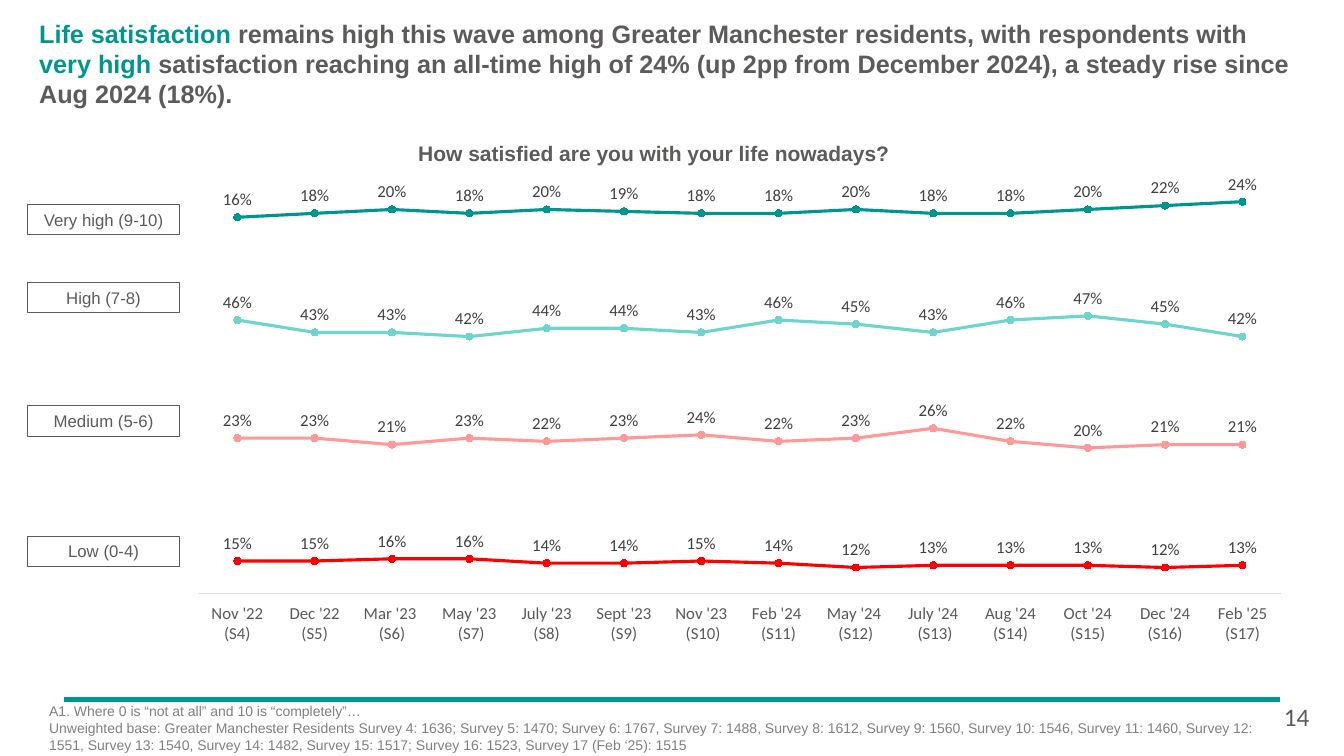
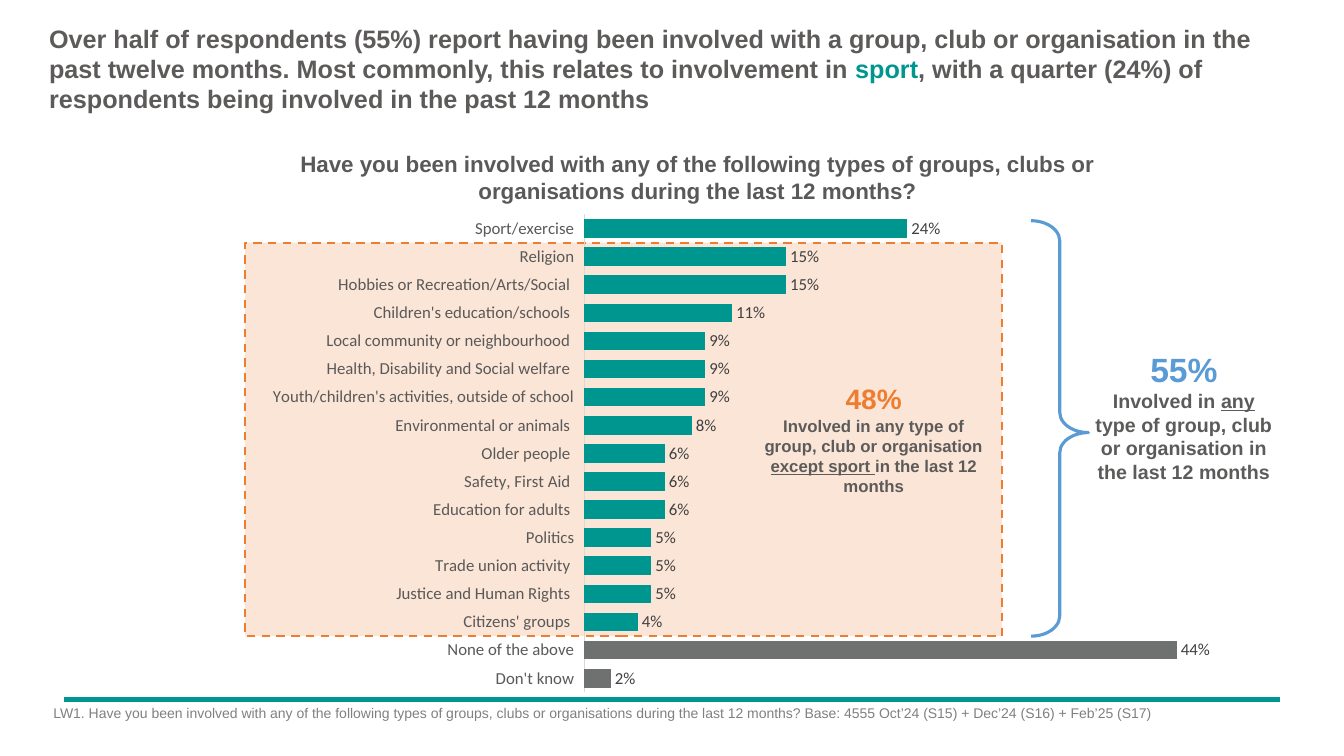
from pptx import Presentation
from pptx.chart.data import CategoryChartData
from pptx.dml.color import RGBColor
from pptx.enum.chart import XL_CHART_TYPE as CT, XL_LABEL_POSITION as LP
from pptx.enum.chart import XL_MARKER_STYLE, XL_TICK_LABEL_POSITION as TLP, XL_TICK_MARK
from pptx.enum.dml import MSO_LINE
from pptx.enum.shapes import MSO_CONNECTOR, MSO_SHAPE
from pptx.enum.text import MSO_ANCHOR, PP_ALIGN
from pptx.oxml import parse_xml
from pptx.oxml.ns import nsdecls, qn
from pptx.util import Pt

# Shared colours and fonts
TEAL, AQUA, PINK, RED = "009690", "6DD5CE", "FF9999", "FF0000"
INK, AXIS_INK, LABEL_INK, NOTE_INK = "5C5B5A", "595959", "404040", "808080"
ORANGE, PEACH, BLUE, BAR_GREY, AXIS_LINE = "ED7D31", "FBE5D6", "5B9BD5", "6F7170", "D9D9D9"
HEAD_FONT, CHART_FONT = "Arial", "Calibri"


def rgb(value):
    return RGBColor.from_string(value)


def pts(box):
    return [Pt(v) for v in box]


# Text helpers
def set_font(font, size, color, name=HEAD_FONT, bold=False):
    font.size, font.name, font.bold = Pt(size), name, bold
    font.color.rgb = rgb(color)


def write(tf, paras, size, color=INK, bold=False, align=PP_ALIGN.LEFT,
          font=HEAD_FONT, inset=None):
    """Each paragraph is a list of (text, overrides) runs."""
    tf.word_wrap = True
    if inset is not None:
        tf.margin_left = tf.margin_right = tf.margin_top = tf.margin_bottom = Pt(inset)
    for i, runs in enumerate(paras):
        p = tf.paragraphs[0] if i == 0 else tf.add_paragraph()
        p.alignment = align
        for text, over in runs:
            r = p.add_run()
            r.text = text
            set_font(r.font, over.get("size", size), over.get("color", color), font, bold)
            if over.get("underline"):
                r.font.underline = True


def add_text(s, box, paras, size, **style):
    tf = s.shapes.add_textbox(*pts(box)).text_frame
    write(tf, paras, size, **style)


def add_box(s, kind, box, line, width, fill=None):
    sp = s.shapes.add_shape(kind, *pts(box))
    sp.shadow.inherit = False
    if fill:
        sp.fill.solid()
        sp.fill.fore_color.rgb = rgb(fill)
    else:
        sp.fill.background()
    sp.line.color.rgb = rgb(line)
    sp.line.width = Pt(width)
    return sp


# Frame shared by the slides: rule, title and footnote
def new_slide(prs):
    s = prs.slides.add_slide(prs.slide_layouts[6])
    rule = s.shapes.add_connector(MSO_CONNECTOR.STRAIGHT, Pt(46), Pt(499.7), Pt(914), Pt(499.7))
    rule.line.color.rgb = rgb(TEAL)
    rule.line.width = Pt(3)
    rule._element.spPr.append(parse_xml(f"<a:effectLst {nsdecls('a')}/>"))
    return s


def add_title(s, runs, inset=None):
    add_text(s, (28, 13, 904, 66), [runs], 18, bold=True, inset=inset)


def add_footnote(s, box, lines):
    add_text(s, box, [[(line, {})] for line in lines], 10, color=NOTE_INK)


# Chart helpers
def add_chart(s, kind, box, cats, values, plot_area, low, show_cats, label_pos):
    data = CategoryChartData(number_format="0%")
    data.categories = cats
    data.add_series("Series 1", values)
    chart = s.shapes.add_chart(kind, *pts(box), data).chart
    chart.has_legend = chart.has_title = False
    set_font(chart.font, 10, "000000", CHART_FONT)

    val, cat = chart.value_axis, chart.category_axis
    val.minimum_scale, val.maximum_scale = low, 0.5
    val.has_major_gridlines = cat.has_major_gridlines = False
    val.visible, cat.visible = False, show_cats
    if show_cats:
        cat.major_tick_mark = cat.minor_tick_mark = XL_TICK_MARK.NONE
        cat.tick_label_position = TLP.LOW
        set_font(cat.tick_labels.font, 12, AXIS_INK, CHART_FONT)
        cat.format.line.color.rgb = rgb(AXIS_LINE)
        cat.format.line.width = Pt(0.75)

    plot = chart.plots[0]
    plot.vary_by_categories = False
    plot.has_data_labels = True
    labels = plot.data_labels
    labels.show_value, labels.position = True, label_pos
    labels.number_format, labels.number_format_is_linked = "0%", False
    set_font(labels.font, 12, LABEL_INK, CHART_FONT)
    place_plot(chart, plot_area)
    return chart


def place_plot(chart, plot_area):
    """Fix the inner plot area and leave chart and plot unfilled."""
    root = chart.element.find(qn("c:chart"))
    area = root.find(qn("c:plotArea"))
    for old in area.findall(qn("c:layout")):
        area.remove(old)
    sizes = "".join(f'<c:{k} val="{v}"/>' for k, v in zip("xywh", plot_area))
    area.insert(0, parse_xml(
        f'<c:layout {nsdecls("c")}><c:manualLayout><c:layoutTarget val="inner"/>'
        f'<c:xMode val="edge"/><c:yMode val="edge"/>{sizes}</c:manualLayout></c:layout>'))
    clear = f'<c:spPr {nsdecls("c", "a")}><a:noFill/><a:ln><a:noFill/></a:ln></c:spPr>'
    area.append(parse_xml(clear))
    root.addnext(parse_xml(clear))


# Slide 1: one line chart per satisfaction band
WAVES = ["Nov '22\n(S4)", "Dec '22\n(S5)", "Mar '23 \n(S6)", "May '23\n (S7)", "July '23\n(S8)",
         "Sept '23\n(S9)", "Nov '23\n (S10)", "Feb '24 \n(S11)", "May '24 \n(S12)",
         "July '24\n (S13)", "Aug '24\n(S14)", "Oct '24\n(S15)", "Dec '24 (S16)", "Feb '25 (S17)"]

# name, colour, tag top, chart top, chart height, plot top, plot height, axis minimum, percentages
BANDS = [
    ("Very high (9-10)", TEAL, 146, 96.5, 147, 0.078, 0.473, 0,
     (16, 18, 20, 18, 20, 19, 18, 18, 20, 18, 18, 20, 22, 24)),
    ("High (7-8)", AQUA, 201.6, 169.2, 147, 0.324, 0.241, 0.38,
     (46, 43, 43, 42, 44, 44, 43, 46, 45, 43, 46, 47, 45, 42)),
    ("Medium (5-6)", PINK, 290, 242.6, 206, 0.036, 0.566, 0,
     (23, 23, 21, 23, 22, 23, 24, 22, 23, 26, 22, 20, 21, 21)),
    ("Low (0-4)", RED, 383, 319.7, 189.4, 0.141, 0.41, 0,
     (15, 15, 16, 16, 14, 14, 15, 14, 12, 13, 13, 13, 12, 13)),
]


def trend_band(s, left, band, show_cats):
    name, color, tag_top, top, height, plot_top, plot_h, low, percents = band
    chart = add_chart(s, CT.LINE_MARKERS_STACKED, (left + 114.8, top, 796.3, height), WAVES,
                      [v / 100 for v in percents], (0.009, plot_top, 0.971, plot_h),
                      low, show_cats, LP.ABOVE)
    line = chart.plots[0].series[0]
    line.smooth = False
    line.format.line.color.rgb = rgb(color)
    line.format.line.width = Pt(2.25)
    marker = line.marker
    marker.style, marker.size = XL_MARKER_STYLE.CIRCLE, 5
    marker.format.fill.solid()
    marker.format.fill.fore_color.rgb = rgb(color)
    marker.format.line.color.rgb = rgb(color)

    tag = add_box(s, MSO_SHAPE.RECTANGLE, (left, tag_top, 108, 21.6), INK, 0.75)
    tag.text_frame.vertical_anchor = MSO_ANCHOR.MIDDLE
    write(tag.text_frame, [[(name, {})]], 12, align=PP_ALIGN.CENTER)


def satisfaction_slide(prs):
    s = new_slide(prs)
    add_title(s, [
        ("Life satisfaction ", {"color": TEAL}),
        ("remains high this wave among Greater Manchester residents, with respondents with ", {}),
        ("very high ", {"color": TEAL}),
        ("satisfaction reaching an all-time high of 24% (up 2pp from December 2024), "
         "a steady rise since Aug 2024 (18%).", {})], inset=0)
    add_text(s, (291.6, 96.5, 370, 25), [[("How satisfied are you with your life nowadays?", {})]],
             15, bold=True)
    for band in BANDS:
        trend_band(s, 20, band, show_cats=band is BANDS[-1])
    add_footnote(s, (28, 498.2, 893.5, 41.8), [
        "A1. Where 0 is “not at all” and 10 is “completely”…",
        "Unweighted base: Greater Manchester Residents Survey 4: 1636; Survey 5: 1470; "
        "Survey 6: 1767, Survey 7: 1488, Survey 8: 1612, Survey 9: 1560, Survey 10: 1546, "
        "Survey 11: 1460, Survey 12: 1551, Survey 13: 1540, Survey 14: 1482, Survey 15: 1517; "
        "Survey 16: 1523, Survey 17 (Feb ‘25): 1515"])
    add_text(s, (910, 497.5, 38, 29), [[("14", {})]], 18, font=CHART_FONT)


# Slide 2: bar chart of group involvement
GROUPS = [
    ("Sport/exercise", 24), ("Religion", 15), ("Hobbies or Recreation/Arts/Social ", 15),
    ("Children's education/schools ", 11), ("Local community or neighbourhood ", 9),
    ("Health, Disability and Social welfare ", 9),
    ("Youth/children's activities, outside of school", 9), ("Environmental or animals ", 8),
    ("Older people ", 6), ("Safety, First Aid ", 6), ("Education for adults ", 6),
    ("Politics", 5), ("Trade union activity ", 5), ("Justice and Human Rights ", 5),
    ("Citizens' groups ", 4), ("None of the above", 44), ("Don't know", 2)]
NO_GROUP = 2  # closing answers that name no group


def callout(s, box, share, color, share_size, size, runs):
    add_text(s, box, [[(share, {"size": share_size, "color": color})], runs], size,
             bold=True, align=PP_ALIGN.CENTER, inset=0)


def involvement_chart(s, box):
    left, top, _, height = box
    plot_top, plot_h = 0.032, 0.954
    row_h = height * plot_h / len(GROUPS)
    first_row = top + height * plot_top
    named = len(GROUPS) - NO_GROUP

    # Highlight behind every named group except sport
    area = add_box(s, MSO_SHAPE.RECTANGLE,
                   (left + 88, first_row + row_h, 540.7, row_h * (named - 1)), ORANGE, 1.5, PEACH)
    area.line.dash_style = MSO_LINE.DASH

    chart = add_chart(s, CT.BAR_CLUSTERED, box, [g for g, _ in GROUPS],
                      [v / 100 for _, v in GROUPS], (0.407, plot_top, 0.593, plot_h),
                      0, True, LP.OUTSIDE_END)
    chart.category_axis.reverse_order = True
    plot = chart.plots[0]
    plot.gap_width = 51
    bars = plot.series[0]
    fills = [bars.format.fill] + [bars.points[i].format.fill for i in range(named, len(GROUPS))]
    for fill, color in zip(fills, [TEAL] + [BAR_GREY] * NO_GROUP):
        fill.solid()
        fill.fore_color.rgb = rgb(color)

    # Totals
    callout(s, (left + 695, top + 107.3, 127.4, 97), "55%", BLUE, 24, 14, [
        ("Involved in ", {}), ("any", {"underline": True}),
        (" type of group, club or organisation in the last 12 months", {})])
    callout(s, (left + 454.3, top + 131, 165.6, 82), "48%", ORANGE, 20, 12, [
        ("Involved in any type of group, club or organisation ", {}),
        ("except sport ", {"underline": True}), ("in the last 12 months", {})])
    brace = add_box(s, MSO_SHAPE.RIGHT_BRACE,
                    (left + 649.5, first_row + 4.4, 41, row_h * named - 4.4), BLUE, 2.25)
    brace.adjustments[0], brace.adjustments[1] = 0.353, 0.51


def involvement_slide(prs):
    s = new_slide(prs)
    add_title(s, [
        ("Over half of respondents (55%) report having been involved with a group, club or "
         "organisation in the past twelve months. Most commonly, this relates to involvement in ", {}),
        ("sport", {"color": TEAL}),
        (", with a quarter (24%) of respondents being involved in the past 12 months", {})])
    add_text(s, (162, 103.7, 672.5, 46), [[(
        "Have you been involved with any of the following types of groups, clubs or "
        "organisations during the last 12 months?", {})]],
        16, color=AXIS_INK, bold=True, align=PP_ALIGN.CENTER)
    involvement_chart(s, (87, 141.8, 811.4, 357.8))
    add_footnote(s, (31, 499.7, 879, 40), [
        "LW1. Have you been involved with any of the following types of groups, clubs or "
        "organisations during the last 12 months? Base: 4555 Oct’24 (S15) + Dec’24 (S16) "
        "+ Feb’25 (S17)"])


def main():
    prs = Presentation()
    prs.slide_width, prs.slide_height = Pt(960), Pt(540)
    satisfaction_slide(prs)
    involvement_slide(prs)
    prs.save("out.pptx")


if __name__ == "__main__":
    main()
